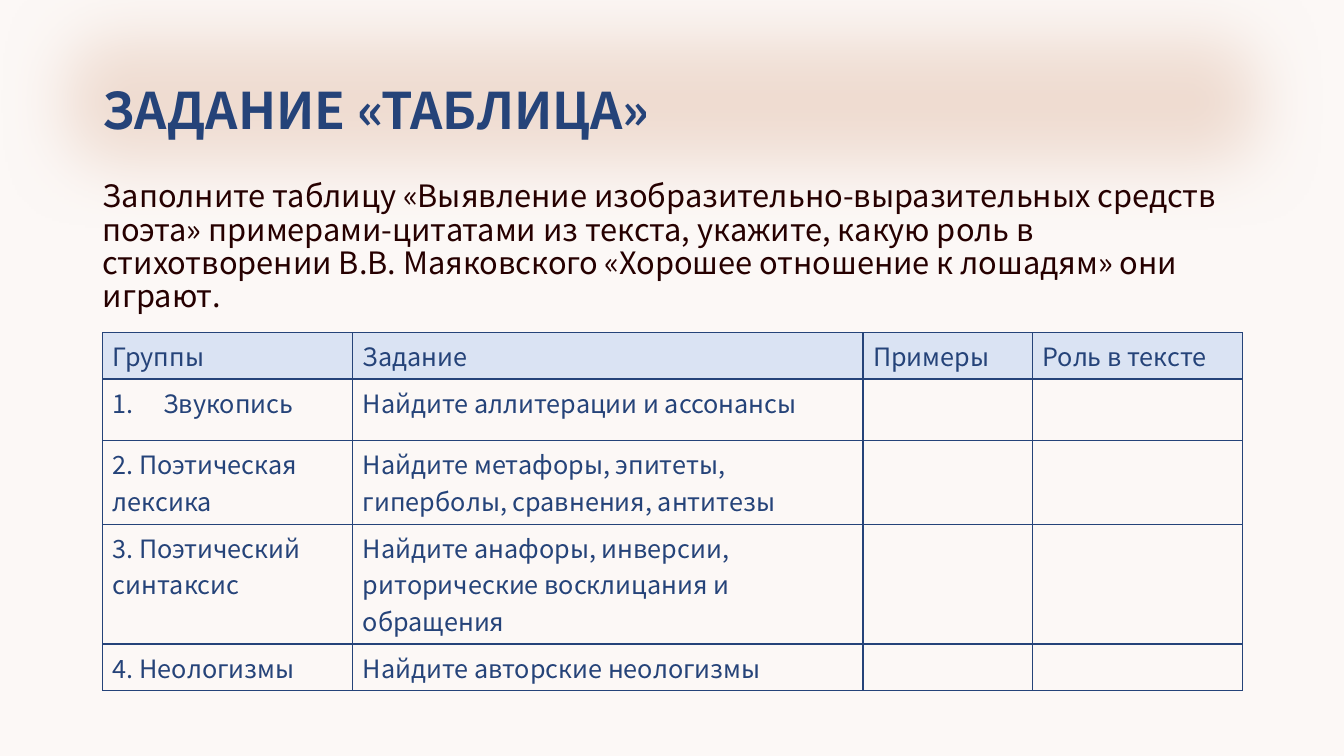
from lxml import etree
from pptx import Presentation
from pptx.dml.color import RGBColor
from pptx.enum.shapes import MSO_SHAPE
from pptx.enum.text import MSO_ANCHOR, PP_ALIGN
from pptx.oxml.ns import qn
from pptx.util import Inches, Pt

RECTANGLE, ROUNDED = MSO_SHAPE.RECTANGLE, MSO_SHAPE.ROUNDED_RECTANGLE
MIDDLE, LEFT = MSO_ANCHOR.MIDDLE, PP_ALIGN.LEFT
TITLE_ONLY = 5
FONT = "Noto Sans CJK KR"
NAVY, MAROON = "254379", "260000"
CREAM, PEACH, PALE_BLUE = "FCF8F6", "EFDCD1", "DAE3F3"
WIDTH, HEIGHT = 13.33, 7.5
MARGIN, TEXT_WIDTH = 0.92, 11.5

COLUMNS = [2.48, 5.06, 1.68, 2.08]
ROWS = [0.46, 0.61, 0.83, 1.19, 0.46]
TASKS = [
    ["Группы", "Задание", "Примеры", "Роль в тексте"],
    ["Звукопись", "Найдите аллитерации и ассонансы", "", ""],
    ["2. Поэтическая лексика",
     "Найдите метафоры, эпитеты, гиперболы, сравнения, антитезы", "", ""],
    ["3. Поэтический синтаксис",
     "Найдите анафоры, инверсии, риторические восклицания и обращения", "", ""],
    ["4. Неологизмы", "Найдите авторские неологизмы", "", ""],
]
INSTRUCTION = (
    "Заполните таблицу «Выявление изобразительно-выразительных средств поэта» "
    "примерами-цитатами из текста, укажите, какую роль в стихотворении "
    "В.В. Маяковского «Хорошее отношение к лошадям» они играют."
)


def color(value):
    return RGBColor.from_string(value)


def inches(box):
    return [Inches(length) for length in box]


def style(paragraph, size, ink, bold=False, spacing=None):
    paragraph.alignment = LEFT
    if spacing:
        paragraph.line_spacing = spacing
    font = paragraph.font
    font.name, font.size, font.bold = FONT, Pt(size), bold
    font.color.rgb = color(ink)


def add_panel(slide, kind, box, fill):
    panel = slide.shapes.add_shape(kind, *inches(box))
    panel.shadow.inherit = False
    panel.fill.solid()
    panel.fill.fore_color.rgb = color(fill)
    panel.line.fill.background()
    return panel


def add_backdrop(slide):
    add_panel(slide, RECTANGLE, (0, 0, WIDTH, HEIGHT), CREAM)
    glow = add_panel(slide, ROUNDED, (0, -0.28, 13.14, 2.58), PEACH)
    effects = glow._element.spPr.find(qn("a:effectLst"))
    etree.SubElement(effects, qn("a:softEdge"), rad=str(Pt(50)))


def add_heading(slide, box):
    heading = slide.shapes.title
    slide.shapes._spTree.append(heading._element)
    heading.left, heading.top, heading.width, heading.height = inches(box)
    frame = heading.text_frame
    frame.text = "ЗАДАНИЕ «ТАБЛИЦА»"
    frame.vertical_anchor = MIDDLE
    style(frame.paragraphs[0], 36, NAVY, bold=True, spacing=0.9)


def add_instruction(slide, box):
    frame = slide.shapes.add_textbox(*inches(box)).text_frame
    frame.word_wrap = True
    frame.text = INSTRUCTION
    style(frame.paragraphs[0], 22, MAROON, spacing=0.9)


def add_borders(cell):
    properties = cell._tc.get_or_add_tcPr()
    for side in ("lnL", "lnR", "lnT", "lnB"):
        border = etree.SubElement(properties, qn(f"a:{side}"), w=str(Pt(1)))
        fill = etree.SubElement(border, qn("a:solidFill"))
        etree.SubElement(fill, qn("a:srgbClr"), val=NAVY)


def add_number(paragraph):
    properties = paragraph._p.get_or_add_pPr()
    properties.set("marL", str(Inches(0.5)))
    properties.set("indent", str(-Inches(0.5)))
    etree.SubElement(properties, qn("a:buAutoNum"), type="arabicPeriod")


def add_tasks(slide, left, top):
    box = (left, top, sum(COLUMNS), sum(ROWS))
    tasks = slide.shapes.add_table(len(ROWS), len(COLUMNS), *inches(box)).table
    for column, width in zip(tasks.columns, COLUMNS):
        column.width = Inches(width)
    for r, (height, texts) in enumerate(zip(ROWS, TASKS)):
        tasks.rows[r].height = Inches(height)
        for c, text in enumerate(texts):
            cell = tasks.cell(r, c)
            cell.text = text
            add_borders(cell)
            cell.fill.solid()
            cell.fill.fore_color.rgb = color(CREAM if r else PALE_BLUE)
            paragraph = cell.text_frame.paragraphs[0]
            if (r, c) == (1, 0):
                add_number(paragraph)
            style(paragraph, 18, NAVY)


def main():
    deck = Presentation()
    deck.slide_width, deck.slide_height = inches((WIDTH, HEIGHT))
    slide = deck.slides.add_slide(deck.slide_layouts[TITLE_ONLY])
    add_backdrop(slide)
    add_heading(slide, (MARGIN, 0.4, TEXT_WIDTH, 1.45))
    add_instruction(slide, (MARGIN, 1.75, TEXT_WIDTH, 1.5))
    add_tasks(slide, MARGIN + 0.1, 3.3)
    deck.save("out.pptx")


if __name__ == "__main__":
    main()
